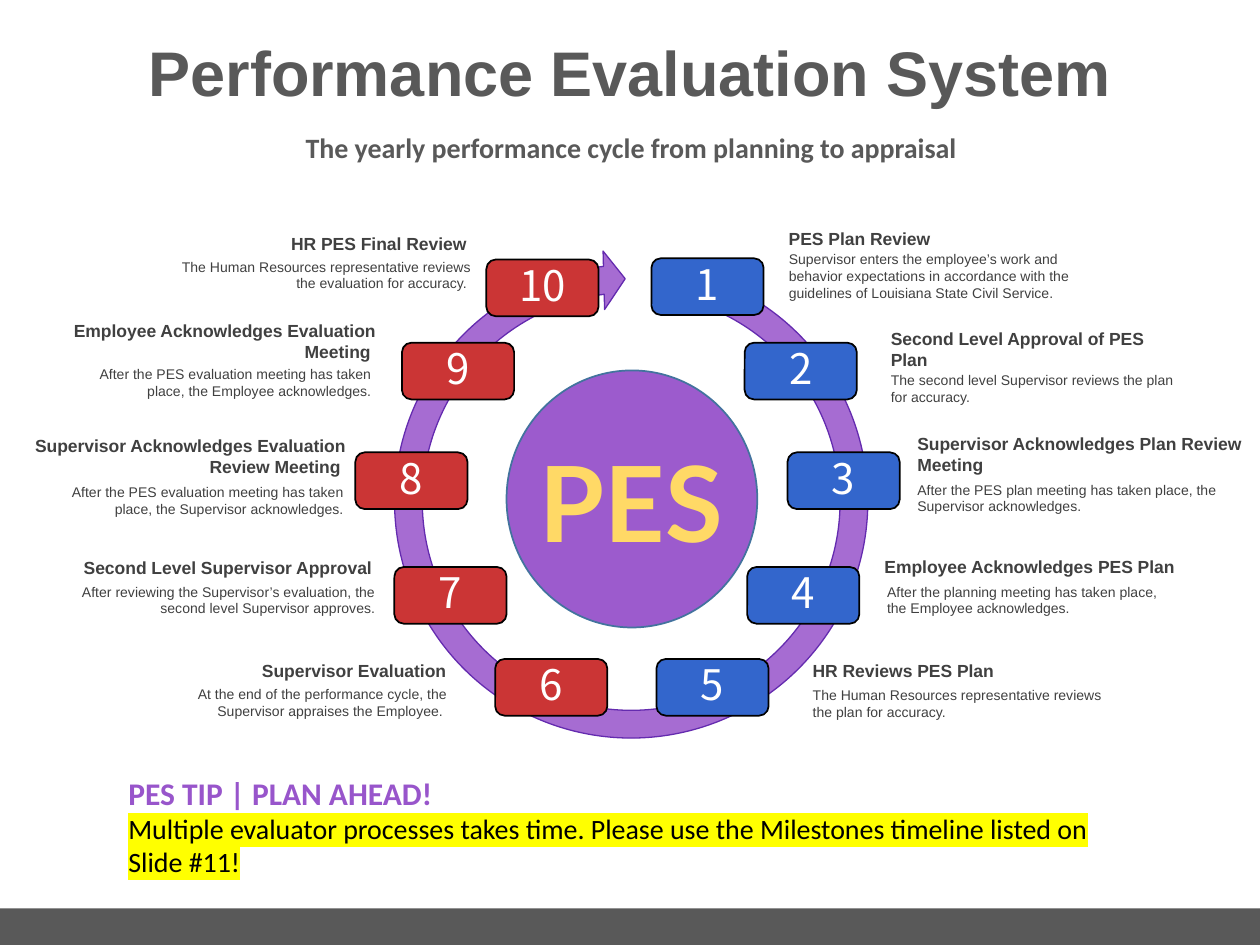
from lxml.etree import SubElement
from pptx import Presentation
from pptx.dml.color import RGBColor
from pptx.enum.shapes import MSO_SHAPE
from pptx.enum.text import MSO_ANCHOR, PP_ALIGN
from pptx.oxml.ns import qn
from pptx.util import Inches, Pt

COLORS = {
    "gray": "595959", "text": "404040", "white": "FFFFFF", "black": "000000",
    "blue": "3366CC", "red": "CB3535", "ring": "A66CD2", "ring_line": "642BAF",
    "disc": "9C5BCD", "disc_line": "43739E", "gold": "FFD966",
    "tip": "9855CB", "highlight": "FFFF00",
}
BADGE_SIZE = (0.89, 0.45)
STEPS = [
    ((5.17, 2.05), "PES Plan Review", (6.17, 1.76, 2.5, 0.27),
     "Supervisor enters the employee’s work and behavior expectations in accordance "
     "with the guidelines of Louisiana State Civil Service.", (6.17, 1.94, 2.48, 0.5)),
    ((5.91, 2.72), "Second Level Approval of PES Plan", (6.98, 2.55, 2.5, 0.45),
     "The second level Supervisor reviews the plan for accuracy.", (6.98, 2.9, 2.48, 0.37)),
    ((6.25, 3.59), "Supervisor Acknowledges Plan Review Meeting", (7.19, 3.39, 2.81, 0.45),
     "After the PES plan meeting has taken place, the Supervisor acknowledges.",
     (7.19, 3.77, 2.79, 0.37)),
    ((5.93, 4.5), "Employee Acknowledges PES Plan", (6.93, 4.36, 2.5, 0.27),
     "After the planning meeting has taken place, the Employee acknowledges.",
     (6.95, 4.58, 2.48, 0.37)),
    ((5.21, 5.23), "HR Reviews PES Plan", (6.36, 5.19, 2.5, 0.28),
     "The Human Resources representative reviews the plan for accuracy.",
     (6.36, 5.4, 2.48, 0.37)),
    ((3.93, 5.23), "Supervisor Evaluation", (1.13, 5.19, 2.5, 0.28),
     "At the end of the performance cycle, the Supervisor appraises the Employee. ",
     (1.26, 5.39, 2.38, 0.37)),
    ((3.13, 4.5), "Second Level Supervisor Approval", (0.54, 4.37, 2.5, 0.27),
     "After reviewing the Supervisor’s evaluation, the second level Supervisor approves.",
     (0.48, 4.58, 2.59, 0.37)),
    ((2.82, 3.59), "Supervisor Acknowledges Evaluation Review Meeting ",
     (-0.21, 3.4, 3.04, 0.45),
     "After the PES evaluation meeting has taken place, the Supervisor acknowledges.",
     (0.18, 3.79, 2.64, 0.37)),
    ((3.19, 2.72), "Employee Acknowledges Evaluation Meeting ", (0.31, 2.49, 2.76, 0.45),
     "After the PES evaluation meeting has taken place, the Employee acknowledges.",
     (0.56, 2.85, 2.48, 0.37)),
    ((3.86, 2.06), "HR PES Final Review ", (1.33, 1.8, 2.5, 0.28),
     "The Human Resources representative reviews the evaluation for accuracy. ",
     (1.33, 2, 2.5, 0.37)),
]


def color(name):
    """Return the named palette colour."""
    return RGBColor.from_string(COLORS[name])


def add_run(paragraph, text, size, font, fill, bold=False):
    """Add a formatted run to a paragraph."""
    run = paragraph.add_run()
    run.text = text
    run.font.size = Pt(size)
    run.font.name = font
    run.font.bold = bold
    run.font.color.rgb = color(fill)
    return run


def add_shape(slide, kind, box, fill, line=None, width=1):
    """Add a flat preset shape in a box."""
    shape = slide.shapes.add_shape(kind, *map(Inches, box))
    shape.shadow.inherit = False
    shape.fill.solid()
    shape.fill.fore_color.rgb = color(fill)
    if line:
        shape.line.color.rgb = color(line)
        shape.line.width = Pt(width)
    else:
        shape.line.fill.background()
    return shape


def add_text(slide, box, text, size, font, fill, bold=False, align=PP_ALIGN.LEFT):
    """Add a wrapped text box with one paragraph and return its frame."""
    frame = slide.shapes.add_textbox(*map(Inches, box)).text_frame
    frame.word_wrap = True
    frame.margin_left = frame.margin_right = Inches(0.09)
    paragraph = frame.paragraphs[0]
    paragraph.alignment = align
    add_run(paragraph, text, size, font, fill, bold)
    return frame


def add_header(slide, title_box, subtitle_box):
    """Place the slide title and the line beneath it."""
    title = slide.shapes.title
    title.left, title.top, title.width, title.height = map(Inches, title_box)
    title_frame = title.text_frame
    paragraph = title_frame.paragraphs[0]
    paragraph.alignment = PP_ALIGN.CENTER
    add_run(paragraph, "Performance Evaluation System", 36, "Arial", "gray", True)
    subtitle_frame = add_text(
        slide, subtitle_box, "The yearly performance cycle from planning to appraisal",
        16, "Calibri", "gray", True, PP_ALIGN.CENTER)
    for frame in (title_frame, subtitle_frame):
        frame.vertical_anchor = MSO_ANCHOR.MIDDLE
        frame.paragraphs[0].line_spacing = 0.9


def add_ring(slide, box):
    """Place the circular arrow behind the steps."""
    ring = add_shape(slide, MSO_SHAPE.CIRCULAR_ARROW, box, "ring", "ring_line", 0.75)
    ring.rotation = 14.5
    for index, value in enumerate((0.055, 3.307, 149.071, 167.291, 0.058)):
        ring.adjustments[index] = value


def add_badge(slide, box, number, fill):
    """Place a numbered step badge."""
    badge = add_shape(slide, MSO_SHAPE.ROUNDED_RECTANGLE, box, fill, "black")
    frame = badge.text_frame
    frame.margin_top = frame.margin_bottom = 0
    frame.vertical_anchor = MSO_ANCHOR.MIDDLE
    paragraph = frame.paragraphs[0]
    paragraph.alignment = PP_ALIGN.CENTER
    paragraph.line_spacing = 0.9
    add_run(paragraph, str(number), 24, "Noto Sans CJK JP", "white")


def add_steps(slide):
    """Place the planning steps on the right and appraisal steps on the left."""
    for number, (corner, heading, heading_box, detail, detail_box) in enumerate(STEPS, 1):
        planning = number <= 5
        align = PP_ALIGN.LEFT if planning else PP_ALIGN.RIGHT
        add_badge(slide, corner + BADGE_SIZE, number, "blue" if planning else "red")
        add_text(slide, detail_box, detail, 8, "Arial", "text", False, align)
        add_text(slide, heading_box, heading, 10, "Arial", "text", True, align)


def add_center(slide, disc_box, label_box):
    """Place the central disc and its label."""
    add_shape(slide, MSO_SHAPE.OVAL, disc_box, "disc", "disc_line")
    add_text(slide, label_box, "PES", 60, "Lato", "gold", True, PP_ALIGN.CENTER)


def add_tip(slide, box):
    """Place the tip heading and its highlighted advice."""
    frame = add_text(slide, box, "PES TIP | PLAN AHEAD!", 18, "Calibri", "tip", True)
    frame.margin_left = frame.margin_right = Inches(0.1)
    run = add_run(
        frame.add_paragraph(),
        "Multiple evaluator processes takes time. Please use the Milestones timeline "
        "listed on Slide #11!", 16, "Calibri", "black")
    properties = run.font._element
    highlight = SubElement(properties, qn("a:highlight"))
    SubElement(highlight, qn("a:srgbClr"), val=COLORS["highlight"])
    properties.find(qn("a:solidFill")).addnext(highlight)


def main():
    """Build and save the presentation."""
    presentation = Presentation()
    presentation.slide_width, presentation.slide_height = Inches(10), Inches(7.5)
    slide = presentation.slides.add_slide(presentation.slide_layouts[5])
    add_shape(slide, MSO_SHAPE.RECTANGLE, (0, 7.21, 10, 0.29), "gray")
    add_header(slide, (0, 0.18, 10, 0.85), (0, 0.96, 10.02, 0.45))
    add_ring(slide, (3.01, 1.98, 4, 4))
    add_steps(slide)
    add_center(slide, (4.02, 2.94, 1.99, 2.04), (4.12, 3.42, 1.78, 1.11))
    add_tip(slide, (0.92, 6.09, 8.18, 0.94))
    presentation.save("out.pptx")


if __name__ == "__main__":
    main()
